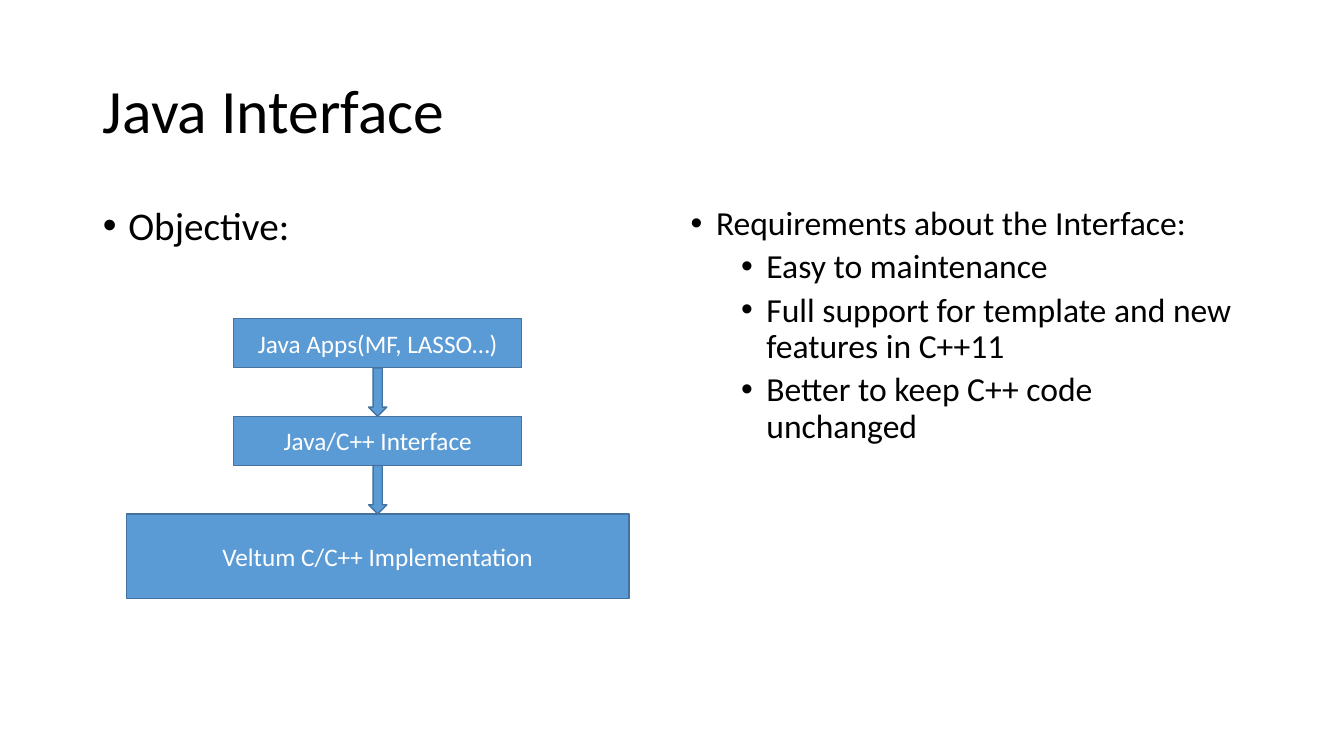
"""Build the Java Interface slide: layered design and its requirements."""
from dataclasses import dataclass

from lxml import etree
from pptx import Presentation
from pptx.dml.color import RGBColor
from pptx.enum import shapes, text
from pptx.oxml import ns
from pptx.util import Cm, Pt

TITLE = "Java Interface"
OBJECTIVE = [("Objective:", 0)]
REQUIREMENTS = [
    ("Requirements about the Interface:", 0),
    ("Easy to maintenance", 1),
    ("Full support for template and new features in C++11", 1),
    ("Better to keep C++ code unchanged", 1),
]
LAYERS = [
    ("Java Apps(MF, LASSO…)", 7.26, 1.24),
    ("Java/C++ Interface", 7.26, 1.24),
    ("Veltum C/C++ Implementation", 12.67, 2.13),
]

TITLE_AREA = (2.34, 1.02, 29.21, 3.68)
LEFT_AREA = (2.34, 5.08, 14.4, 12.09)
RIGHT_AREA = (17.15, 5.08, 14.4, 12.09)
STACK_CENTER, STACK_TOP = 9.52, 8.03
ARROW_WIDTH, ARROW_HEIGHT = 0.46, 1.22
BULLET_INDENT = Cm(0.64)
LEVEL_MARGIN = (Cm(0.64), Cm(1.91))
LEVEL_SPACE = (Pt(10), Pt(5))


@dataclass(frozen=True)
class Theme:
    font: str = "Calibri"
    ink: RGBColor = RGBColor.from_string("000000")
    paper: RGBColor = RGBColor.from_string("FFFFFF")
    fill: RGBColor = RGBColor.from_string("5B9BD5")
    edge: RGBColor = RGBColor.from_string("43739E")
    title: Pt = Pt(44)
    objective: Pt = Pt(28)
    requirement: Pt = Pt(24)
    label: Pt = Pt(18)


THEME = Theme()


def apply(target, **values):
    for name, value in values.items():
        setattr(target, name, value)


def place(box, area):
    apply(box, **dict(zip(("left", "top", "width", "height"), map(Cm, area))))


def write(para, words, size, color, **layout):
    span = para.add_run()
    span.text = words
    apply(span.font, name=THEME.font, size=size)
    span.font.color.rgb = color
    apply(para, **layout)


def add_bullet(para, level):
    properties = para._p.get_or_add_pPr()
    properties.set("marL", str(LEVEL_MARGIN[level]))
    properties.set("indent", str(-BULLET_INDENT))
    for tag, key, value in (("a:buFont", "typeface", "Arial"), ("a:buChar", "char", "•")):
        etree.SubElement(properties, ns.qn(tag)).set(key, value)


def fill_list(box, area, items, size):
    place(box, area)
    frame = box.text_frame
    apply(frame, word_wrap=True, auto_size=text.MSO_AUTO_SIZE.NONE)
    for index, (words, level) in enumerate(items):
        para = frame.add_paragraph() if index else frame.paragraphs[0]
        write(para, words, size, THEME.ink, level=level, line_spacing=0.9,
              space_before=LEVEL_SPACE[level])
        add_bullet(para, level)


def add_block(page, kind, top, width, height):
    left = STACK_CENTER - width / 2
    block = page.shapes.add_shape(kind, *map(Cm, (left, top, width, height)))
    block.shadow.inherit = False
    block.fill.solid()
    block.fill.fore_color.rgb = THEME.fill
    block.line.color.rgb = THEME.edge
    block.line.width = Pt(1)
    return block


def draw_stack(page):
    top = STACK_TOP
    for index, (words, width, height) in enumerate(LAYERS):
        if index:
            add_block(page, shapes.MSO_SHAPE.DOWN_ARROW, top, ARROW_WIDTH, ARROW_HEIGHT)
            top += ARROW_HEIGHT
        frame = add_block(page, shapes.MSO_SHAPE.RECTANGLE, top, width, height).text_frame
        apply(frame, word_wrap=True, vertical_anchor=text.MSO_ANCHOR.MIDDLE)
        write(frame.paragraphs[0], words, THEME.label, THEME.paper,
              alignment=text.PP_ALIGN.CENTER)
        top += height


def main():
    deck = Presentation()
    apply(deck, slide_width=Cm(33.87), slide_height=Cm(19.05))
    page = deck.slides.add_slide(deck.slide_layouts.get_by_name("Two Content"))
    title, left, right = list(page.placeholders)[:3]

    place(title, TITLE_AREA)
    apply(title.text_frame, word_wrap=True, auto_size=text.MSO_AUTO_SIZE.NONE,
          vertical_anchor=text.MSO_ANCHOR.MIDDLE)
    write(title.text_frame.paragraphs[0], TITLE, THEME.title, THEME.ink,
          alignment=text.PP_ALIGN.LEFT, line_spacing=0.9)
    fill_list(left, LEFT_AREA, OBJECTIVE, THEME.objective)
    fill_list(right, RIGHT_AREA, REQUIREMENTS, THEME.requirement)
    draw_stack(page)
    deck.save("out.pptx")


if __name__ == "__main__":
    main()
